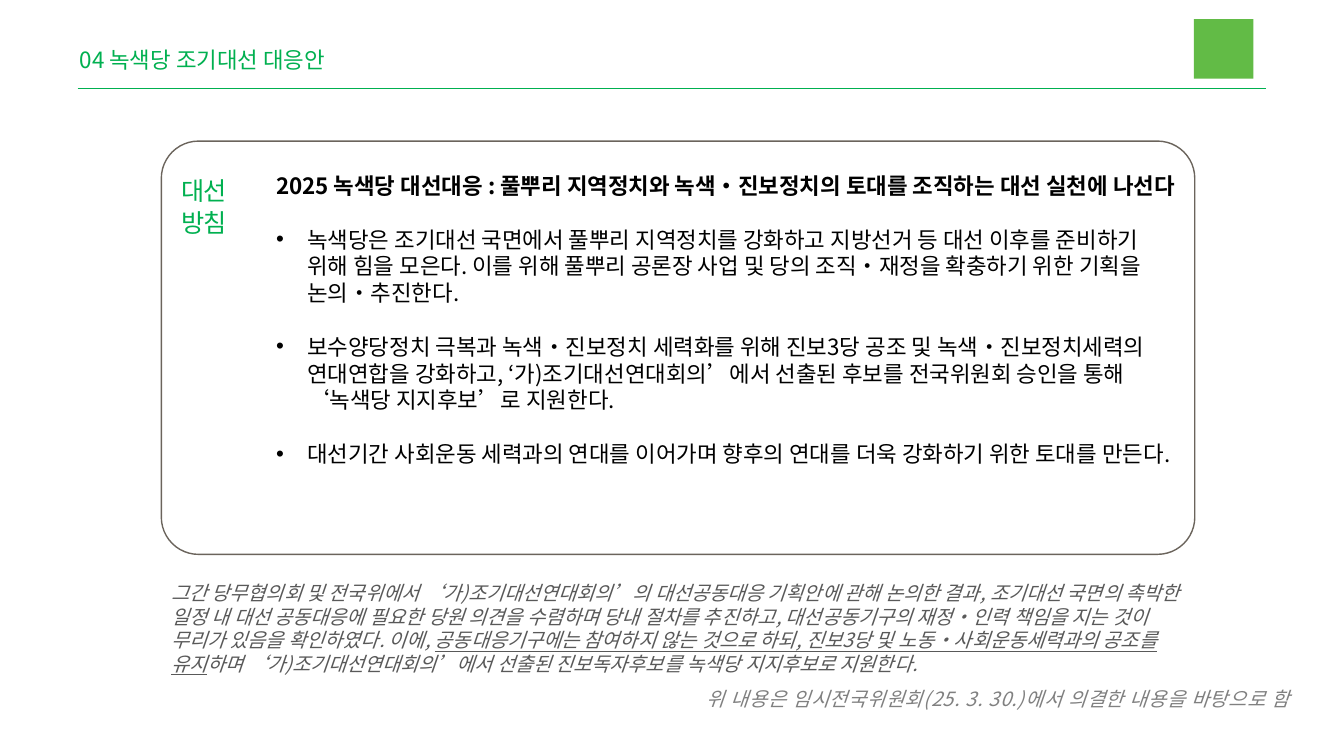
from lxml import etree
from pptx import Presentation
from pptx.dml.color import RGBColor
from pptx.enum.shapes import MSO_CONNECTOR, MSO_SHAPE
from pptx.enum.text import MSO_ANCHOR, PP_ALIGN
from pptx.oxml.ns import qn
from pptx.util import Inches, Pt

STRAIGHT = MSO_CONNECTOR.STRAIGHT
RECTANGLE, ROUNDED = MSO_SHAPE.RECTANGLE, MSO_SHAPE.ROUNDED_RECTANGLE
TOP, BOTTOM = MSO_ANCHOR.TOP, MSO_ANCHOR.BOTTOM
LEFT, RIGHT = PP_ALIGN.LEFT, PP_ALIGN.RIGHT
FONT = "Noto Sans CJK KR"
GREEN = "00B050"
BODY_LINE = 19.15

TITLE = "04 녹색당 조기대선 대응안"
LABEL = "대선방침"
HEADING = "2025 녹색당 대선대응 : 풀뿌리 지역정치와 녹색・진보정치의 토대를 조직하는 대선 실천에 나선다"
POLICIES = [
    "녹색당은 조기대선 국면에서 풀뿌리 지역정치를 강화하고 지방선거 등 대선 이후를 준비하기 위해 힘을 모은다. 이를 위해 풀뿌리 공론장 사업 및 당의 조직・재정을 확충하기 위한 기획을 논의・추진한다.",
    "보수양당정치 극복과 녹색•진보정치 세력화를 위해 진보3당 공조 및 녹색・진보정치세력의 연대연합을 강화하고, ‘가)조기대선연대회의’에서 선출된 후보를 전국위원회 승인을 통해 ‘녹색당 지지후보’로 지원한다.",
    "대선기간 사회운동 세력과의 연대를 이어가며 향후의 연대를 더욱 강화하기 위한 토대를 만든다.",
]
BACKGROUND = [
    ("그간 당무협의회 및 전국위에서 ‘가)조기대선연대회의’의 대선공동대응 기획안에 관해 논의한 결과, 조기대선 국면의 촉박한 일정 내 대선 공동대응에 필요한 당원 의견을 수렴하며 당내 절차를 추진하고, 대선공동기구의 재정・인력 책임을 지는 것이 무리가 있음을 확인하였다. 이에, ", False),
    ("공동대응기구에는 참여하지 않는 것으로 하되, 진보3당 및 노동•사회운동세력과의 공조를 유지", True),
    ("하며 ‘가)조기대선연대회의’에서 선출된 진보독자후보를 녹색당 지지후보로 지원한다.", False),
]
FOOTNOTE = "위 내용은 임시전국위원회(25. 3. 30.)에서 의결한 내용을 바탕으로 함"

TITLE_STYLE = {"size": Pt(16), "color": GREEN}
LABEL_STYLE = {"size": Pt(18), "color": GREEN, "spacing": -0.5}
HEADING_STYLE = {"size": Pt(16), "color": "000000", "bold": True}
POLICY_STYLE = {"size": Pt(16), "color": "000000", "bold": False}
BACKGROUND_STYLE = {"size": Pt(14), "color": "595959", "italic": True}
FOOTNOTE_STYLE = {"size": Pt(14), "color": "808080", "italic": True, "spacing": 0.5}


def color(value):
    return RGBColor.from_string(value)


def add_run(paragraph, text, style, underline=False):
    run = paragraph.add_run()
    run.text = text
    for name, value in style.items():
        if name == "color":
            run.font.color.rgb = color(value)
        elif name == "spacing":
            run.font._element.set("spc", str(round(value * 100)))
        else:
            setattr(run.font, name, value)
    run.font.underline = underline
    run.font.name = FONT


def set_paragraph(paragraph, line, before=0, align=LEFT):
    formats = {"line_spacing": Pt(line), "space_before": Pt(before), "alignment": align}
    for name, value in formats.items():
        setattr(paragraph, name, value)


def add_bullet(paragraph, indent):
    properties = paragraph._p.get_or_add_pPr()
    properties.set("marL", str(indent))
    properties.set("indent", str(-indent))
    etree.SubElement(properties, qn("a:buFont")).set("typeface", "Arial")
    etree.SubElement(properties, qn("a:buChar")).set("char", "•")


def place(shape, box, anchor=TOP):
    shape.left, shape.top, shape.width, shape.height = (Inches(side) for side in box)
    shape.text_frame.word_wrap = True
    shape.text_frame.vertical_anchor = anchor
    return shape.text_frame


def add_text(slide, box, runs, style, line, align=LEFT, anchor=TOP):
    frame = place(slide.shapes.add_textbox(0, 0, 0, 0), box, anchor)
    set_paragraph(frame.paragraphs[0], line, align=align)
    for text, underline in runs:
        add_run(frame.paragraphs[0], text, style, underline)
    return frame


def add_panel(slide, kind, box, fill=None, outline=None):
    shape = slide.shapes.add_shape(kind, *(Inches(side) for side in box))
    shape.shadow.inherit = False
    if fill:
        shape.fill.solid()
        shape.fill.fore_color.rgb = color(fill)
    else:
        shape.fill.background()
    if outline:
        shape.line.color.rgb = color(outline)
        shape.line.width = Pt(1)
    else:
        shape.line.fill.background()
    return shape


def add_rule(slide, left, right, top):
    rule = slide.shapes.add_connector(
        STRAIGHT, Inches(left), Inches(top), Inches(right), Inches(top))
    rule.line.color.rgb = color(GREEN)
    rule.line.width = Pt(0.5)
    etree.SubElement(rule._element.spPr, qn("a:effectLst"))


def main():
    presentation = Presentation()
    presentation.slide_width = Inches(13.33)
    presentation.slide_height = Inches(7.5)
    slide = presentation.slides.add_slide(presentation.slide_layouts[5])

    title = place(slide.shapes.title, (0.69, 0.41, 4.82, 0.37))
    set_paragraph(title.paragraphs[0], BODY_LINE)
    add_run(title.paragraphs[0], TITLE, TITLE_STYLE)

    add_rule(slide, 0.77, 12.56, 0.88)
    add_panel(slide, RECTANGLE, (11.84, 0.19, 0.59, 0.59), fill="62BB46")
    frame = add_panel(slide, ROUNDED, (1.6, 1.4, 10.25, 4.1), outline="6B645C")
    frame.adjustments[0] = 0.09

    add_text(slide, (1.7, 1.66, 0.83, 0.74), [(LABEL, False)], LABEL_STYLE, 23.5)
    policies = add_text(slide, (2.64, 1.66, 9.2, 3.06), [(HEADING, False)],
                        HEADING_STYLE, BODY_LINE)
    for policy in POLICIES:
        paragraph = policies.add_paragraph()
        set_paragraph(paragraph, BODY_LINE, before=BODY_LINE)
        add_bullet(paragraph, Inches(0.31))
        add_run(paragraph, policy, POLICY_STYLE)

    add_text(slide, (1.6, 5.71, 10.25, 1.04), BACKGROUND, BACKGROUND_STYLE, 17)
    add_text(slide, (0.64, 6.43, 12.25, 0.67), [(FOOTNOTE, False)], FOOTNOTE_STYLE, 20,
             align=RIGHT, anchor=BOTTOM)
    presentation.save("out.pptx")


if __name__ == "__main__":
    main()
